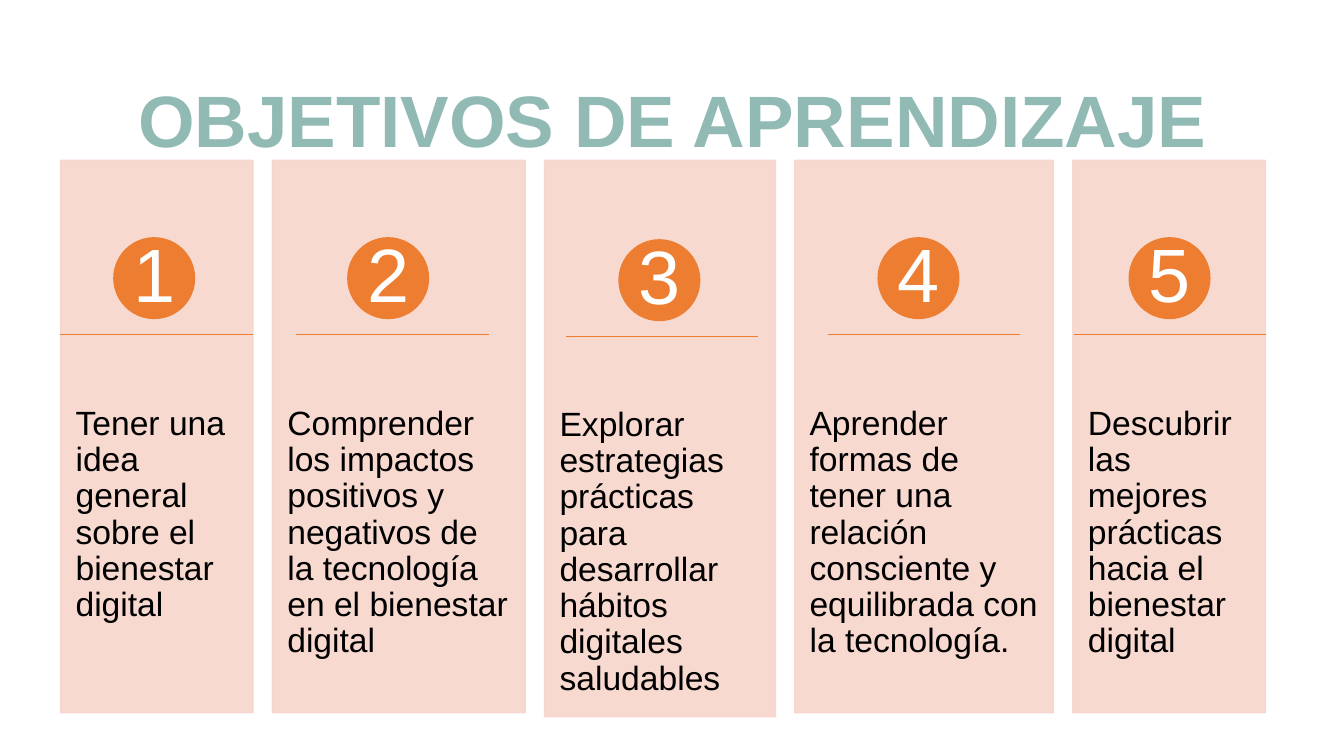
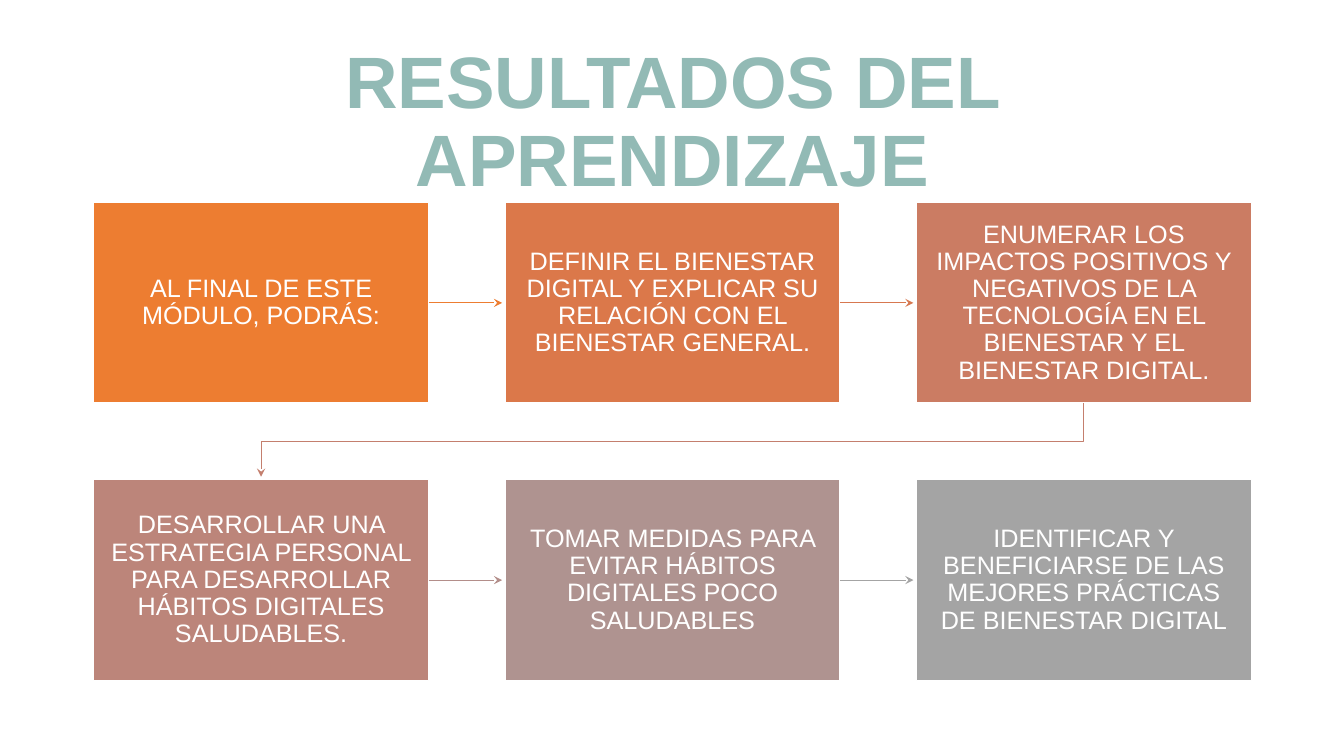
from pptx import Presentation
from pptx.dml.color import RGBColor
from pptx.enum.shapes import MSO_CONNECTOR, MSO_SHAPE
from pptx.enum.text import MSO_ANCHOR, PP_ALIGN
from pptx.oxml.ns import qn
from pptx.oxml.xmlchemy import OxmlElement
from pptx.util import Inches, Pt

RECTANGLE, OVAL = MSO_SHAPE.RECTANGLE, MSO_SHAPE.OVAL
STRAIGHT = MSO_CONNECTOR.STRAIGHT
LEFT, CENTER = PP_ALIGN.LEFT, PP_ALIGN.CENTER
TOP, MIDDLE = MSO_ANCHOR.TOP, MSO_ANCHOR.MIDDLE
RIGHT_SIDE = 3
TITLE_ONLY = 5

FONT = "Arial"
COLORS = {
    "title": "92BAB5",
    "accent": "ED7D31",
    "panel": "F7D5CB",
    "text": "000000",
    "white": "FFFFFF",
}

OBJECTIVES_TITLE = "OBJETIVOS DE APRENDIZAJE"
# text, panel width, circle left, divider left, extra drop (inches)
OBJECTIVES = [
    ("Tener una idea general sobre el bienestar digital", 1.91, 1.13, 0.6, 0),
    ("Comprender los impactos positivos y negativos de la tecnología en el bienestar digital",
     2.51, 3.45, 2.94, 0),
    ("Explorar estrategias prácticas para desarrollar hábitos digitales saludables",
     2.29, 6.14, 5.61, 0.02),
    ("Aprender formas de tener una relación consciente y equilibrada con la tecnología.",
     2.57, 8.71, 8.21, 0),
    ("Descubrir las mejores prácticas hacia el bienestar digital", 1.91, 11.2, 10.65, 0),
]
PANEL_LEFT, PANEL_TOP, PANEL_HEIGHT, PANEL_GAP = 0.6, 1.59, 5.48, 0.19
PANEL_MARGINS = (0.15, 2.44, 0.15, 0.36)
CIRCLE_TOP, CIRCLE_SIZE = 2.36, 0.8
DIVIDER_TOP, DIVIDER_WIDTH = 3.32, 1.91

RESULTS_TITLE = "RESULTADOS DEL APRENDIZAJE"
# text, box colour, colour of the arrow to the next box
RESULTS = [
    ("AL FINAL DE ESTE MÓDULO, PODRÁS:", "ED7D31", "ED7D31"),
    ("DEFINIR EL BIENESTAR DIGITAL Y EXPLICAR SU RELACIÓN CON EL BIENESTAR GENERAL.",
     "DB784A", "D77850"),
    ("ENUMERAR LOS IMPACTOS POSITIVOS Y NEGATIVOS DE LA TECNOLOGÍA EN EL BIENESTAR "
     "Y EL BIENESTAR DIGITAL.", "CB7C63", "C47F6E"),
    ("DESARROLLAR UNA ESTRATEGIA PERSONAL PARA DESARROLLAR HÁBITOS DIGITALES SALUDABLES.",
     "BC857A", "B38E8A"),
    ("TOMAR MEDIDAS PARA EVITAR HÁBITOS DIGITALES POCO SALUDABLES", "AF9390", "A4A4A4"),
    ("IDENTIFICAR Y BENEFICIARSE DE LAS MEJORES PRÁCTICAS DE BIENESTAR DIGITAL",
     "A4A4A4", None),
]
COLUMNS = 3
BOX_LEFT, BOX_TOP, BOX_WIDTH, BOX_HEIGHT = 0.93, 2.01, 3.32, 1.99
COLUMN_STEP, ROW_STEP = 4.08, 2.75
BOX_MARGINS = (0.16, 0.17, 0.16, 0.17)
ARROW_LENGTH = 0.73


def rgb(color):
    return RGBColor.from_string(color)


def write(shape, text, size, color, align=CENTER, anchor=MIDDLE,
          margins=(0, 0, 0, 0), bold=False, wrap=True):
    frame = shape.text_frame
    frame.text = text
    frame.word_wrap = wrap
    frame.vertical_anchor = anchor
    (frame.margin_left, frame.margin_top,
     frame.margin_right, frame.margin_bottom) = map(Inches, margins)
    paragraph = frame.paragraphs[0]
    paragraph.alignment = align
    paragraph.line_spacing = 0.9
    font = paragraph.font
    font.name, font.size, font.bold = FONT, Pt(size), bold
    font.color.rgb = rgb(color)


def add_titled_slide(presentation, title):
    slide = presentation.slides.add_slide(presentation.slide_layouts[TITLE_ONLY])
    placeholder = slide.shapes.title
    placeholder.left, placeholder.top = Inches(0.92), Inches(0.61)
    placeholder.width, placeholder.height = Inches(11.5), Inches(1.24)
    write(placeholder, title, 52, COLORS["title"],
          margins=(0.1, 0.05, 0.1, 0.05), bold=True)
    return slide


def add_filled(slide, kind, left, top, width, height, fill, line):
    shape = slide.shapes.add_shape(kind, *map(Inches, (left, top, width, height)))
    shape.shadow.inherit = False
    shape.fill.solid()
    shape.fill.fore_color.rgb = rgb(fill)
    shape.line.color.rgb = rgb(line)
    shape.line.width = Pt(1)
    return shape


def set_opacity(shape, percent):
    for color in shape._element.spPr.iter(qn("a:srgbClr")):
        alpha = OxmlElement("a:alpha")
        alpha.set("val", str(percent * 1000))
        color.append(alpha)


def add_line(slide, x1, y1, x2, y2, color, width):
    line = slide.shapes.add_connector(STRAIGHT, *map(Inches, (x1, y1, x2, y2)))
    line.line.color.rgb = rgb(color)
    line.line.width = Pt(width)
    line._element.spPr.append(OxmlElement("a:effectLst"))
    return line


def add_arrowhead(shape):
    tail = OxmlElement("a:tailEnd")
    tail.set("type", "stealth")
    shape.line._get_or_add_ln().append(tail)


def add_row_turn(slide, start_x, start_y, end_x, color):
    """Draw the bent arrow from the end of one row to the start of the next."""
    middle_y, end_y = start_y + 0.38, start_y + ARROW_LENGTH
    builder = slide.shapes.build_freeform(Inches(start_x), Inches(start_y))
    corners = [(start_x, middle_y), (end_x, middle_y), (end_x, end_y)]
    builder.add_line_segments([(Inches(x), Inches(y)) for x, y in corners], close=False)
    turn = builder.convert_to_shape()
    turn.shadow.inherit = False
    turn.fill.background()
    turn.line.color.rgb = rgb(color)
    turn.line.width = Pt(0.75)
    add_arrowhead(turn)


def build_objectives(presentation):
    slide = add_titled_slide(presentation, OBJECTIVES_TITLE)
    accent = COLORS["accent"]
    left = PANEL_LEFT
    for number, (text, width, circle_left, divider_left, drop) in enumerate(OBJECTIVES, 1):
        panel = add_filled(slide, RECTANGLE, left, PANEL_TOP, width, PANEL_HEIGHT + 2 * drop,
                           COLORS["panel"], COLORS["panel"])
        set_opacity(panel, 90)
        margin_left, margin_top, *other_margins = PANEL_MARGINS
        write(panel, text, 24, COLORS["text"], LEFT, TOP,
              (margin_left, margin_top + drop / 2, *other_margins))
        circle = add_filled(slide, OVAL, circle_left, CIRCLE_TOP + drop,
                            CIRCLE_SIZE, CIRCLE_SIZE, accent, accent)
        write(circle, str(number), 54, COLORS["white"], wrap=False)
        divider_y = DIVIDER_TOP + drop
        add_line(slide, divider_left, divider_y, divider_left + DIVIDER_WIDTH, divider_y,
                 accent, 1)
        left += width + PANEL_GAP


def build_results(presentation):
    slide = add_titled_slide(presentation, RESULTS_TITLE)
    for index, (text, fill, arrow_color) in enumerate(RESULTS):
        row, column = divmod(index, COLUMNS)
        left = BOX_LEFT + column * COLUMN_STEP
        top = BOX_TOP + row * ROW_STEP
        box = add_filled(slide, RECTANGLE, left, top, BOX_WIDTH, BOX_HEIGHT,
                         fill, COLORS["white"])
        write(box, text, 18, COLORS["white"], margins=BOX_MARGINS)
        if arrow_color is None:
            continue
        if column == COLUMNS - 1:
            add_row_turn(slide, left + BOX_WIDTH / 2, top + BOX_HEIGHT,
                         BOX_LEFT + BOX_WIDTH / 2, arrow_color)
        else:
            right, middle = left + BOX_WIDTH, top + BOX_HEIGHT / 2
            arrow = add_line(slide, right, middle, right + ARROW_LENGTH, middle,
                             arrow_color, 0.75)
            arrow.begin_connect(box, RIGHT_SIDE)
            add_arrowhead(arrow)


def main():
    presentation = Presentation()
    presentation.slide_width, presentation.slide_height = Inches(13.33), Inches(7.5)
    build_objectives(presentation)
    build_results(presentation)
    presentation.save("out.pptx")


if __name__ == "__main__":
    main()
